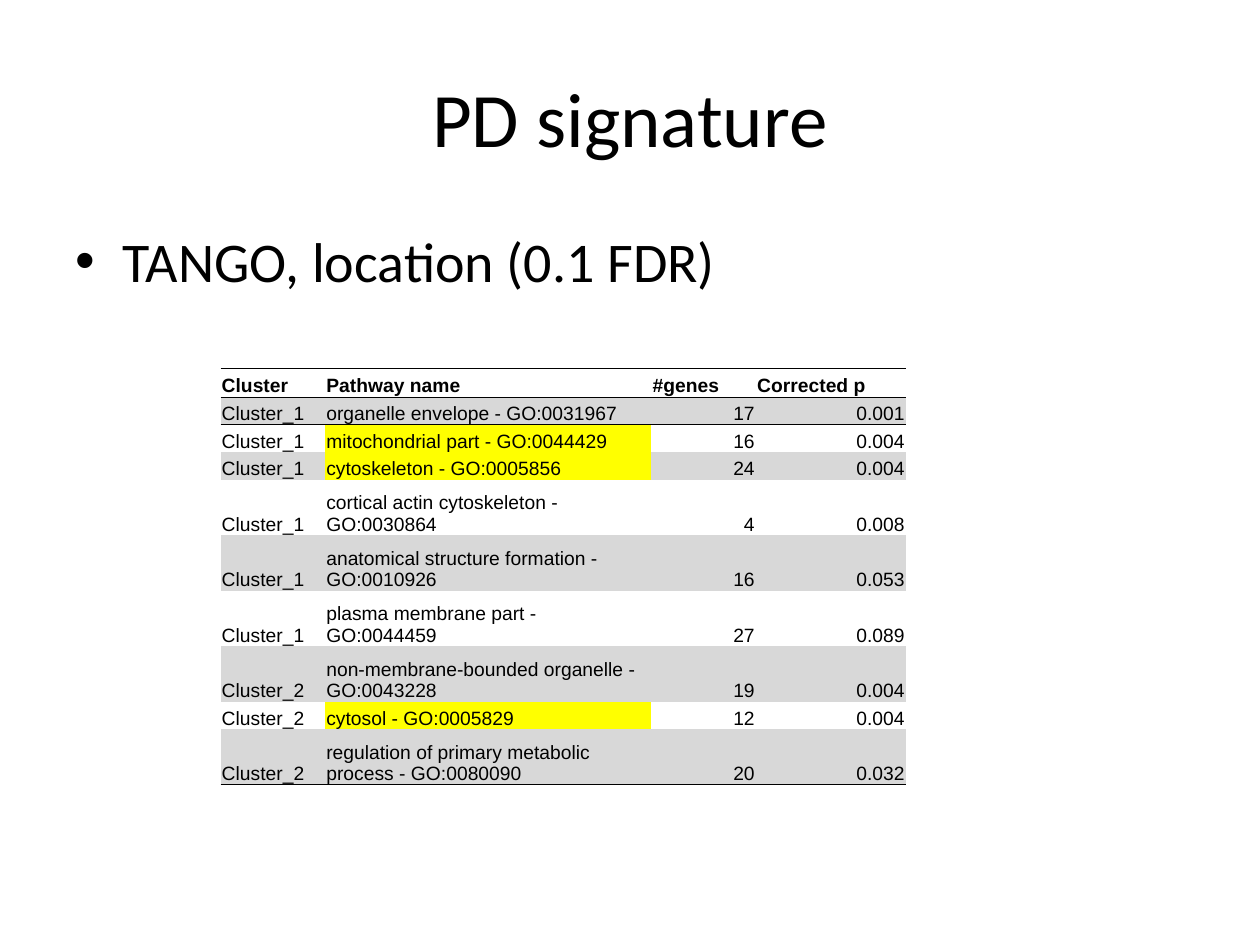
from pptx import Presentation
from pptx.util import Inches, Pt
from pptx.dml.color import RGBColor
from pptx.enum.text import PP_ALIGN as Al, MSO_ANCHOR as Anc
from pptx.oxml import parse_xml
from pptx.oxml.ns import nsdecls, qn

TITLE = "PD signature"
POINT = "TANGO, location (0.1 FDR)"
HEAD = ("Cluster", "Pathway name", "#genes", "Corrected p")
ROWS = [
    ("Cluster_1", "organelle envelope - GO:0031967", "17", "0.001"),
    ("Cluster_1", "mitochondrial part - GO:0044429", "16", "0.004"),
    ("Cluster_1", "cytoskeleton - GO:0005856", "24", "0.004"),
    ("Cluster_1", "cortical actin cytoskeleton - GO:0030864", "4", "0.008"),
    ("Cluster_1", "anatomical structure formation - GO:0010926", "16", "0.053"),
    ("Cluster_1", "plasma membrane part - GO:0044459", "27", "0.089"),
    ("Cluster_2", "non-membrane-bounded organelle - GO:0043228", "19", "0.004"),
    ("Cluster_2", "cytosol - GO:0005829", "12", "0.004"),
    ("Cluster_2", "regulation of primary metabolic process - GO:0080090", "20", "0.032"),
]
MARKED = {2, 3, 8}
COLS = (0.83, 2.59, 0.83, 1.19)
LINE = 0.22
FIT = 31
BLACK, GRAY, YELLOW = "000000", "D8D8D8", "FFFF00"
PLAIN = "{2D5ABB26-0587-4C30-8999-92F81FD0307C}"


def paint(color, hue):
    color.rgb = RGBColor.from_string(hue)


def write(frame, text, size, font="Calibri", bold=False, align=None, hue=BLACK):
    para = frame.paragraphs[0]
    para.alignment = align
    run = para.add_run()
    run.text = text
    run.font.size, run.font.name, run.font.bold = Pt(size), font, bold
    paint(run.font.color, hue)


def place(shape, left, top, width, height):
    shape.left, shape.top = Inches(left), Inches(top)
    shape.width, shape.height = Inches(width), Inches(height)


def rule(cell, *sides):
    for spot, side in enumerate(sides):
        cell._tc.get_or_add_tcPr().insert(spot, parse_xml(
            f'<a:ln{side} {nsdecls("a")} w="{Pt(0.5)}"><a:solidFill>'
            f'<a:srgbClr val="{BLACK}"/></a:solidFill></a:ln{side}>'))


def dress(cell, row, col, text):
    cell.margin_left = cell.margin_top = cell.margin_right = Inches(0.01)
    cell.margin_bottom = 0
    cell.vertical_anchor = Anc.BOTTOM
    right = row > 0 and col > 1
    write(cell.text_frame, text, 11, "Arial", row == 0, Al.RIGHT if right else Al.LEFT)
    hue = YELLOW if row in MARKED and col == 1 else GRAY if row % 2 else None
    if hue:
        cell.fill.solid()
        paint(cell.fill.fore_color, hue)
    else:
        cell.fill.background()
    if row == 0:
        rule(cell, "T", "B")
    elif row == 1:
        rule(cell, "T")
    elif row == len(ROWS):
        rule(cell, "B")


def build():
    deck = Presentation()
    deck.slide_width, deck.slide_height = Inches(10), Inches(7.5)
    slide = deck.slides.add_slide(deck.slide_layouts[1])
    title, body = slide.placeholders
    place(title, 0.5, 0.3, 9, 1.25)
    place(body, 0.5, 1.75, 9, 4.95)
    write(title.text_frame, TITLE, 44, align=Al.CENTER)
    write(body.text_frame, POINT, 32)

    cells = [HEAD] + ROWS
    highs = [LINE * (2 if len(row[1]) > FIT else 1) for row in cells]
    highs[0] += 0.01
    grid = slide.shapes.add_table(
        len(cells), len(COLS), Inches(1.75), Inches(2.92),
        Inches(sum(COLS)), Inches(sum(highs))).table
    grid.first_row = grid.horz_banding = False
    grid._tbl.tblPr.find(qn("a:tableStyleId")).text = PLAIN
    for col, wide in zip(grid.columns, COLS):
        col.width = Inches(wide)
    for r, (row, high) in enumerate(zip(cells, highs)):
        grid.rows[r].height = Inches(high)
        for c, text in enumerate(row):
            dress(grid.cell(r, c), r, c, text)
    deck.save("out.pptx")


if __name__ == "__main__":
    build()
